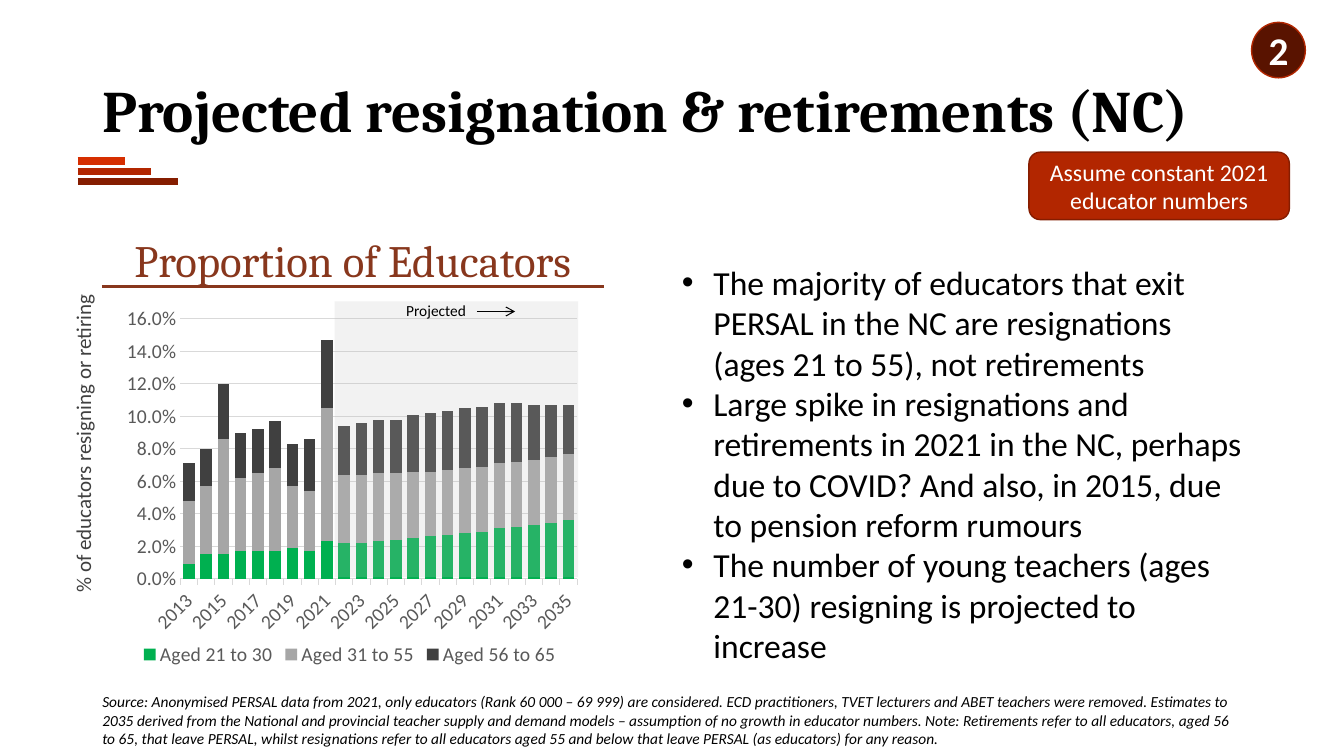
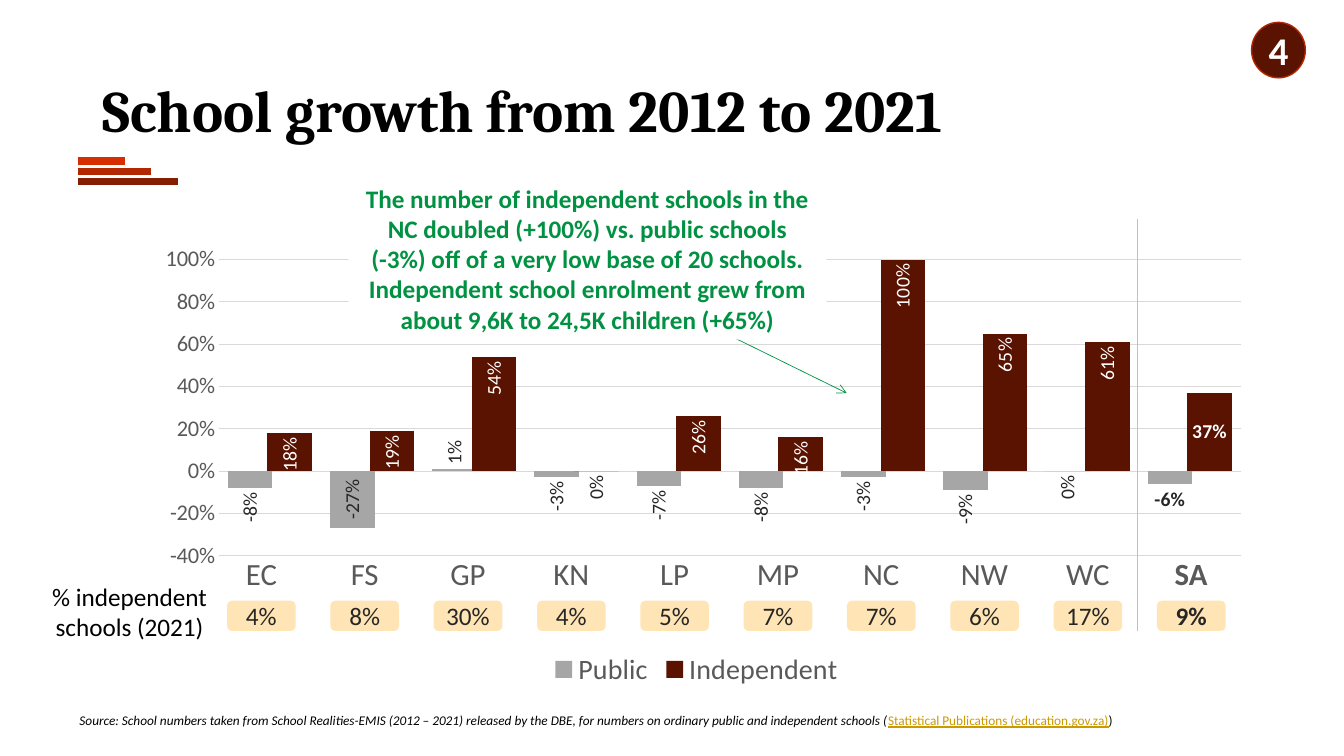
from collections import namedtuple
from dataclasses import dataclass

from lxml.etree import SubElement
from pptx import Presentation
from pptx.chart.data import CategoryChartData
from pptx.dml.color import RGBColor
from pptx.enum.chart import XL_CHART_TYPE as ChartType
from pptx.enum.chart import XL_LABEL_POSITION as LabelPlace
from pptx.enum.chart import XL_LEGEND_POSITION as LegendPlace
from pptx.enum.chart import XL_TICK_LABEL_POSITION as TickLabels
from pptx.enum.chart import XL_TICK_MARK as TickMark
from pptx.enum.shapes import MSO_CONNECTOR as Connector
from pptx.enum.shapes import MSO_SHAPE as Shape
from pptx.enum.text import MSO_ANCHOR as Anchor
from pptx.enum.text import PP_ALIGN as Align
from pptx.oxml.ns import qn
from pptx.util import Pt


@dataclass(frozen=True)
class Theme:
    body: str = "Calibri"
    display: str = "Cambria"
    black: str = "000000"
    white: str = "FFFFFF"
    bright: str = "D62E00"
    red: str = "B22600"
    deep: str = "851D00"
    maroon: str = "591300"
    heading: str = "88371D"
    green: str = "00B050"
    callout: str = "009242"
    dark: str = "404040"
    ink: str = "262626"
    axis: str = "595959"
    gray: str = "A6A6A6"
    silver: str = "BFBFBF"
    grid: str = "D9D9D9"
    cream: str = "FFE5B5"
    link: str = "CC9900"
    title_size: float = 42
    heading_size: float = 32
    badge_size: float = 28
    body_size: float = 24
    region_size: float = 22
    legend_size: float = 20
    note_size: float = 18
    tag_size: float = 17
    scale_size: float = 16
    side_size: float = 15
    chart_size: float = 14
    small_size: float = 11
    source_size: float = 9.5


THEME = Theme()


class Box(namedtuple("Box", "left top width height")):
    def area(self, x, y, width, height):
        return Box(self.left + x, self.top + y, width, height)

    def lengths(self):
        return [Pt(value) for value in self]


def color(value):
    return RGBColor.from_string(value)


def set_font(font, size, tint, name=THEME.body, bold=False, italic=False, underline=False):
    font.size, font.name = Pt(size), name
    font.color.rgb = color(tint)
    font.bold, font.italic, font.underline = bold, italic, underline


def add_bullet(para, indent):
    props = para._p.get_or_add_pPr()
    props.set("marL", str(Pt(indent)))
    props.set("indent", str(-Pt(indent)))
    SubElement(props, qn("a:buFont"), typeface="Arial")
    SubElement(props, qn("a:buChar"), char="•")


def write(frame, text, align=Align.LEFT, anchor=Anchor.TOP, insets=(7.2, 3.6, 7.2, 3.6),
          spacing=None, bullet=None, **style):
    frame.word_wrap = True
    frame.vertical_anchor = anchor
    (frame.margin_left, frame.margin_top,
     frame.margin_right, frame.margin_bottom) = [Pt(inset) for inset in insets]
    for index, spans in enumerate([text] if isinstance(text, str) else text):
        para = frame.paragraphs[0] if index == 0 else frame.add_paragraph()
        para.alignment = align
        if spacing:
            para.line_spacing = spacing
        if bullet:
            add_bullet(para, bullet)
        for words, changes in [(spans, {})] if isinstance(spans, str) else spans:
            span = para.add_run()
            span.text = words
            set_font(span.font, **{**style, **changes})


def add_text(page, box, text, **style):
    label = page.shapes.add_textbox(*box.lengths())
    write(label.text_frame, text, **style)
    return label


def add_block(page, box, kind, fill, text, line=None, opacity=None, **style):
    block = page.shapes.add_shape(kind, *box.lengths())
    block.shadow.inherit = False
    block.fill.solid()
    block.fill.fore_color.rgb = color(fill)
    if opacity:
        tint = block.fill._xPr.find(".//" + qn("a:srgbClr"))
        SubElement(tint, qn("a:alpha"), val=str(opacity * 1000))
    if line:
        block.line.color.rgb = color(line)
        block.line.width = Pt(1)
    else:
        block.line.fill.background()
    write(block.text_frame, text, **style)


def add_line(page, x1, y1, x2, y2, tint, width, arrow=False):
    line = page.shapes.add_connector(Connector.STRAIGHT, Pt(x1), Pt(y1), Pt(x2), Pt(y2))
    line.line.color.rgb = color(tint)
    line.line.width = Pt(width)
    if arrow:
        SubElement(line.line._get_or_add_ln(), qn("a:tailEnd"), type="arrow")
    SubElement(line._element.spPr, qn("a:effectLst"))


def add_columns(page, box, kind, categories, series, plot_area, number_format, scale,
                gap, overlap, scale_size, legend_size):
    data = CategoryChartData(number_format=number_format)
    data.categories = categories
    for name, values, tint in series:
        data.add_series(name, values)
    chart = page.shapes.add_chart(kind, *box.lengths(), data).chart
    set_font(chart.font, THEME.chart_size, THEME.black)
    chart.has_title = False
    chart.has_legend = True
    chart.legend.position = LegendPlace.BOTTOM
    chart.legend.include_in_layout = False
    set_font(chart.legend.font, legend_size, THEME.axis)

    plot = chart.plots[0]
    plot.gap_width, plot.overlap, plot.vary_by_categories = gap, overlap, False
    for item, (name, values, tint) in zip(plot.series, series):
        item.invert_if_negative = False
        item.format.fill.solid()
        item.format.fill.fore_color.rgb = color(tint)

    axis = chart.value_axis
    axis.minimum_scale, axis.maximum_scale, axis.major_unit = scale
    axis.major_tick_mark = TickMark.NONE
    axis.format.line.fill.background()
    axis.major_gridlines.format.line.color.rgb = color(THEME.grid)
    axis.major_gridlines.format.line.width = Pt(0.75)
    axis.tick_labels.number_format = number_format
    axis.tick_labels.number_format_is_linked = False
    set_font(axis.tick_labels.font, scale_size, THEME.axis)

    area = chart._chartSpace.chart.plotArea
    for old in area.findall(qn("c:layout")):
        area.remove(old)
    layout = SubElement(area, qn("c:layout"))
    area.insert(0, layout)
    manual = SubElement(layout, qn("c:manualLayout"))
    settings = [("layoutTarget", "inner"), ("xMode", "edge"), ("yMode", "edge")]
    for tag, value in settings + list(zip("xywh", plot_area)):
        SubElement(manual, qn("c:" + tag), val=str(value))
    return chart


def turn_text(element, degrees):
    for body in element.iter(qn("a:bodyPr")):
        body.set("rot", str(degrees * 60000))
        body.set("vert", "horz")


def label_series(series, place, tint, exceptions):
    labels = series.data_labels
    labels.show_value = True
    labels.number_format, labels.number_format_is_linked = "0%", False
    labels.position = place
    set_font(labels.font, THEME.chart_size, tint)
    turn_text(labels._element, -90)
    for index, (spot, shade, bold) in exceptions.items():
        label = series.points[index].data_label
        set_font(label.font, THEME.chart_size, shade, bold=bold)
        label.position = spot
        turn_text(label._dLbl, 0 if bold else -90)


def start_page(deck, title, number):
    page = deck.slides.add_slide(deck.slide_layouts[6])
    bars = [(THEME.deep, 72), (THEME.red, 52.5), (THEME.bright, 34)]
    for row, (tint, length) in enumerate(bars):
        y = 129.6 - 7.2 * row
        add_line(page, 55.4, y, 55.4 + length, y, tint, 5.5)
    add_text(page, Box(66, 28.8, 828, 104.4), title, anchor=Anchor.MIDDLE, spacing=0.9,
             size=THEME.title_size, tint=THEME.black, name=THEME.display, bold=True)
    add_block(page, Box(894, 16, 38.4, 39.6), Shape.OVAL, THEME.maroon, number,
              line=THEME.red, align=Align.CENTER, anchor=Anchor.MIDDLE, insets=(0, 0, 0, 0),
              size=THEME.badge_size, tint=THEME.white, bold=True)
    return page


def exit_panel(page, box):
    centered = dict(align=Align.CENTER, anchor=Anchor.MIDDLE)
    add_text(page, box.area(17.7, 0, 358.6, 41), "Proportion of Educators", **centered,
             size=THEME.heading_size, tint=THEME.heading, name=THEME.display)
    rule = box.top + 39.5
    add_line(page, box.left + 17.7, rule, box.left + 376.3, rule, THEME.heading, 2.25)
    series = [
        ("Aged 21 to 30", (.009, .015, .015, .017, .017, .017, .019, .017, .023, .022, .022, .023,
                           .024, .025, .026, .027, .028, .029, .031, .032, .033, .034, .036),
         THEME.green),
        ("Aged 31 to 55", (.039, .042, .071, .045, .048, .051, .038, .037, .082, .042, .042, .042,
                           .041, .041, .04, .04, .04, .04, .04, .04, .04, .041, .041),
         THEME.gray),
        ("Aged 56 to 65", (.023, .023, .034, .028, .027, .029, .026, .032, .042, .03, .032, .033,
                           .033, .035, .036, .036, .037, .037, .037, .036, .034, .032, .03),
         THEME.dark),
    ]
    chart = add_columns(page, box.area(22, 41, 345.6, 273), ChartType.COLUMN_STACKED,
                        [str(year) for year in range(2013, 2036)], series,
                        (0.15, 0.08, 0.82, 0.68), "0.0%", (0, 0.16, 0.02), 50, 100,
                        THEME.chart_size, THEME.chart_size)
    axis = chart.category_axis
    axis.major_tick_mark = TickMark.OUTSIDE
    axis.tick_label_position = TickLabels.LOW
    axis.format.line.color.rgb = color(THEME.grid)
    axis.format.line.width = Pt(0.75)
    set_font(axis.tick_labels.font, THEME.chart_size, THEME.axis)
    turn_text(axis._element, -45)
    side = add_text(page, box.area(-118.4, 144.6, 245, 14.4),
                    "% of educators resigning or retiring", **centered,
                    size=THEME.side_size, tint=THEME.dark)
    side.rotation = 270
    add_block(page, box.area(184, 50.3, 174, 197), Shape.RECTANGLE, THEME.silver, "Projected",
              opacity=20, align=Align.CENTER, insets=(7.2, 0, 36, 0),
              size=THEME.small_size, tint=THEME.black)
    arrow = box.top + 57.5
    add_line(page, box.left + 285.6, arrow, box.left + 313, arrow, THEME.black, 0.75, arrow=True)


def resignation_page(deck):
    page = start_page(deck, "Projected resignation & retirements (NC)", "2")
    add_block(page, Box(735, 108.7, 186, 48.2), Shape.ROUNDED_RECTANGLE, THEME.red,
              "Assume constant 2021 educator numbers", line=THEME.deep, align=Align.CENTER,
              anchor=Anchor.MIDDLE, size=THEME.tag_size, tint=THEME.white)
    add_text(page, Box(66, 491, 828, 41),
             "Source: Anonymised PERSAL data from 2021, only educators (Rank 60 000 – 69 999) are "
             "considered. ECD practitioners, TVET lecturers and ABET teachers were removed. "
             "Estimates to 2035 derived from the National and provincial teacher supply and demand "
             "models – assumption of no growth in educator numbers. Note: Retirements refer to all "
             "educators, aged 56 to 65, that leave PERSAL, whilst resignations refer to all "
             "educators aged 55 and below that leave PERSAL (as educators) for any reason.",
             size=THEME.small_size, tint=THEME.black, italic=True)
    exit_panel(page, Box(55, 165, 380, 315))
    add_block(page, Box(480, 183.6, 414, 294.5), Shape.RECTANGLE, THEME.white, [
        "The majority of educators that exit PERSAL in the NC are resignations (ages 21 to 55), "
        "not retirements",
        "Large spike in resignations and retirements in 2021 in the NC, perhaps due to COVID? "
        "And also, in 2015, due to pension reform rumours",
        "The number of young teachers (ages 21-30) resigning is projected to increase",
    ], bullet=22.5, size=THEME.body_size, tint=THEME.black)


def region_strip(page, box):
    regions = ["EC", "FS", "GP", "KN", "LP", "MP", "NC", "NW", "WC", "SA"]
    shares = [4, 8, 30, 4, 5, 7, 7, 6, 17, 9]
    pitch = box.width / len(regions)
    names = box.area(0, 0, box.width, 31.7)
    table = page.shapes.add_table(1, len(regions), *names.lengths()).table
    table.first_row = table.horz_banding = False
    style = table._tbl.tblPr.find(qn("a:tableStyleId"))
    style.text = "{2D5ABB26-0587-4C30-8999-92F81FD0307C}"
    for column, (region, share) in enumerate(zip(regions, shares)):
        total = region == "SA"
        table.columns[column].width = Pt(pitch)
        cell = table.cell(0, column)
        cell.fill.background()
        write(cell.text_frame, region, align=Align.CENTER,
              size=THEME.region_size, tint=THEME.axis, bold=total)
        cell.margin_left = cell.margin_top = cell.margin_right = Pt(0.7)
        cell.margin_bottom = Pt(0)
        cell.vertical_anchor = Anchor.BOTTOM
        pill = box.area(pitch * column + (pitch - 49) / 2, 36.7, 49, 21.6)
        add_block(page, pill, Shape.ROUNDED_RECTANGLE, THEME.cream, f"{share}%",
                  align=Align.CENTER, anchor=Anchor.MIDDLE, insets=(0, 0, 0, 0),
                  size=THEME.note_size, tint=THEME.ink, bold=total)
    add_text(page, box.area(-114.5, 21.6, 114.5, 45.4), "% independent schools (2021)",
             align=Align.CENTER, anchor=Anchor.MIDDLE, insets=(0, 3.6, 0, 3.6),
             size=THEME.note_size, tint=THEME.black)


def growth_chart(page, box):
    series = [
        ("Public", (-.08, -.27, .01, -.03, -.07, -.08, -.03, -.09, 0, -.06), THEME.gray),
        ("Independent", (.18, .19, .54, 0, .26, .16, 1, .65, .61, .37), THEME.maroon),
    ]
    chart = add_columns(page, box, ChartType.COLUMN_CLUSTERED, range(1, 11), series,
                        (0.07, 0.05, 0.92, 0.65), "0%", (-0.4, 1, 0.2), 40, 11,
                        THEME.scale_size, THEME.legend_size)
    chart.category_axis.visible = False
    public, independent = chart.plots[0].series
    label_series(public, LabelPlace.OUTSIDE_END, THEME.ink, {
        1: (LabelPlace.CENTER, THEME.ink, False),
        8: (LabelPlace.INSIDE_END, THEME.ink, False),
        9: (LabelPlace.OUTSIDE_END, THEME.ink, True)})
    label_series(independent, LabelPlace.INSIDE_END, THEME.white, {
        3: (LabelPlace.INSIDE_END, THEME.ink, False),
        9: (LabelPlace.CENTER, THEME.white, True)})


def growth_page(deck):
    page = start_page(deck, "School growth from 2012 to 2021", "4")
    growth_chart(page, Box(100.8, 169.2, 793.5, 325.4))
    add_text(page, Box(49.7, 505.4, 860, 30), [[
        ("Source: School numbers taken from School Realities-EMIS (2012 – 2021) released by the "
         "DBE, for numbers on ordinary public and independent schools (", {"italic": True}),
        ("Statistical Publications (education.gov.za)", {"tint": THEME.link, "underline": True}),
        (")", {}),
    ]], size=THEME.source_size, tint=THEME.black)
    region_strip(page, Box(149.8, 392.4, 738, 60))
    add_line(page, 812.2, 156.2, 812.2, 450.7, THEME.silver, 0.5)
    add_line(page, 518.4, 238.3, 604.8, 280.8, THEME.callout, 0.5, arrow=True)
    add_block(page, Box(249, 126.7, 341.3, 116), Shape.RECTANGLE, THEME.white,
              "The number of independent schools in the NC doubled (+100%) vs. public schools "
              "(-3%) off of a very low base of 20 schools. Independent school enrolment grew from "
              "about 9,6K to 24,5K children (+65%)", align=Align.CENTER, anchor=Anchor.MIDDLE,
              size=THEME.note_size, tint=THEME.callout, bold=True)


def main():
    deck = Presentation()
    deck.slide_width, deck.slide_height = Pt(960), Pt(540)
    resignation_page(deck)
    growth_page(deck)
    deck.save("out.pptx")


if __name__ == "__main__":
    main()
